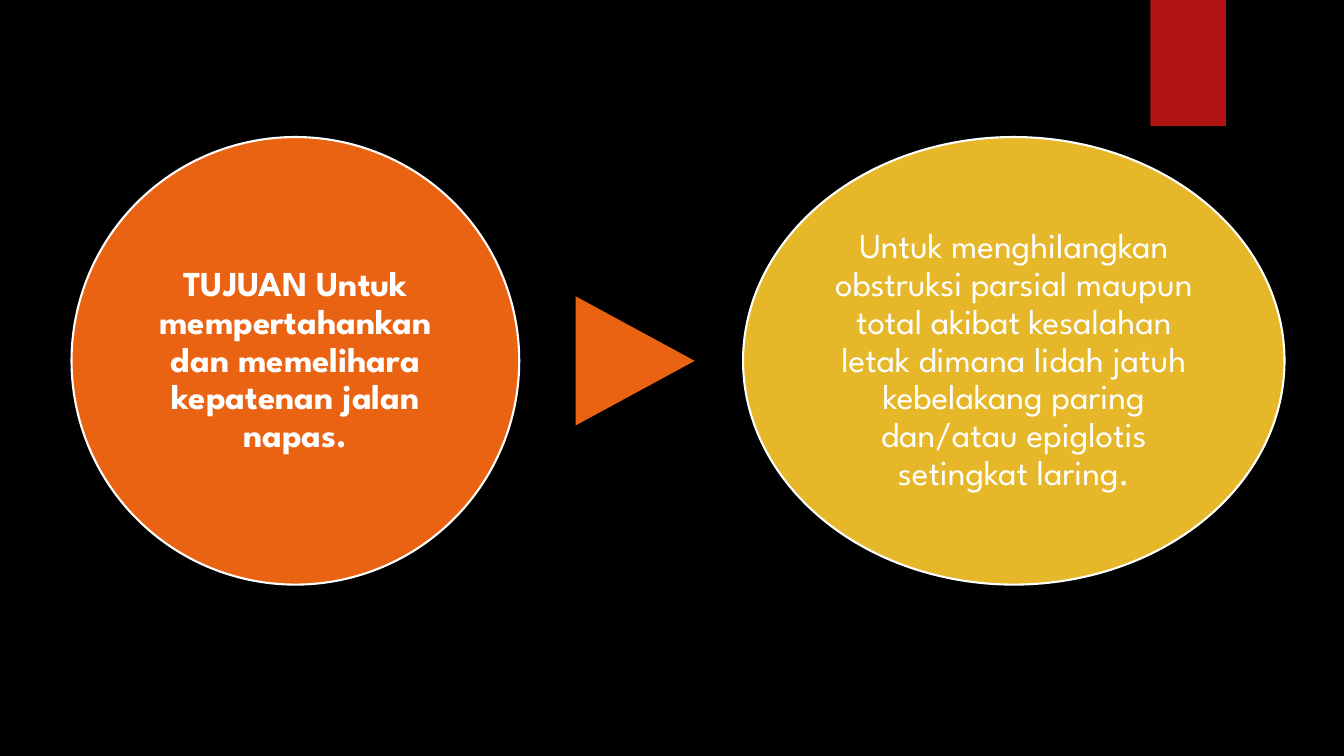
from dataclasses import dataclass

from pptx import Presentation
from pptx import util as u
from pptx.dml.color import RGBColor
from pptx.enum import shapes, text


@dataclass(frozen=True)
class Theme:
    background: RGBColor = RGBColor.from_string("000000")
    ribbon: RGBColor = RGBColor.from_string("B01513")
    purpose: RGBColor = RGBColor.from_string("EA6312")
    explanation: RGBColor = RGBColor.from_string("E6B729")
    light: RGBColor = RGBColor.from_string("FFFFFF")
    font: str = "League Spartan"
    body_size: u.Pt = u.Pt(25)
    outline: u.Pt = u.Pt(1.5)


THEME = Theme()
KIND = shapes.MSO_SHAPE


def add_filled(slide, kind, bounds, color):
    figure = slide.shapes.add_shape(kind, *map(u.Inches, bounds))
    figure.shadow.inherit = False
    figure.fill.solid()
    figure.fill.fore_color.rgb = color
    figure.line.fill.background()
    return figure


def add_bubble(slide, bounds, color, wording, bold=False):
    bubble = add_filled(slide, KIND.OVAL, bounds, color)
    bubble.line.color.rgb = THEME.light
    bubble.line.width = THEME.outline
    frame = bubble.text_frame
    frame.word_wrap = True
    frame.vertical_anchor = text.MSO_ANCHOR.MIDDLE
    frame.margin_left = frame.margin_right = u.Inches(0.03)
    frame.margin_top = frame.margin_bottom = u.Inches(0.03)
    statement = frame.paragraphs[0]
    statement.text = wording
    statement.alignment = text.PP_ALIGN.CENTER
    statement.line_spacing = 0.9
    statement.font.name = THEME.font
    statement.font.size = THEME.body_size
    statement.font.bold = bold
    statement.font.color.rgb = THEME.light


def main():
    deck = Presentation()
    deck.slide_width = u.Inches(13.33)
    deck.slide_height = u.Inches(7.5)
    slide = deck.slides.add_slide(deck.slide_layouts.get_by_name("Blank"))
    slide.background.fill.solid()
    slide.background.fill.fore_color.rgb = THEME.background

    add_filled(slide, KIND.RECTANGLE, (11.41, 0, 0.75, 1.25), THEME.ribbon)
    add_bubble(
        slide, (0.71, 1.36, 4.44, 4.44), THEME.purpose,
        "TUJUAN Untuk mempertahankan dan memelihara kepatenan jalan napas.",
        bold=True,
    )
    pointer = add_filled(
        slide, KIND.ISOSCELES_TRIANGLE, (5.66, 2.99, 1.28, 1.18), THEME.purpose
    )
    pointer.rotation = 90
    add_bubble(
        slide, (7.37, 1.36, 5.37, 4.44), THEME.explanation,
        "Untuk menghilangkan obstruksi parsial maupun total akibat kesalahan "
        "letak dimana lidah jatuh kebelakang paring dan/atau epiglotis "
        "setingkat laring.",
    )
    deck.save("out.pptx")


if __name__ == "__main__":
    main()
